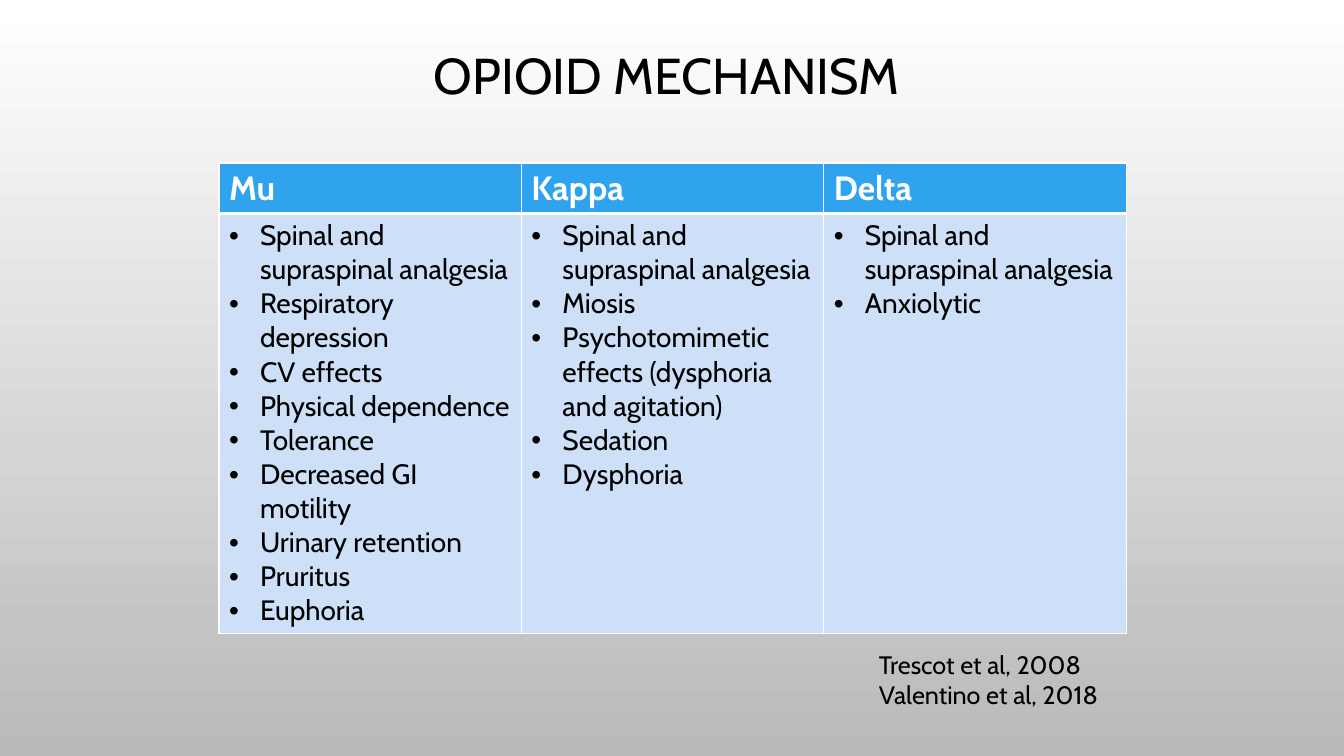
from lxml.etree import SubElement
from pptx import Presentation
from pptx.dml.color import RGBColor
from pptx.enum.text import MSO_ANCHOR, MSO_AUTO_SIZE, PP_ALIGN
from pptx.oxml.ns import qn
from pptx.util import Emu, Pt

TITLE = "OPIOID MECHANISM "
RECEPTORS = {
    "Mu": [
        "Spinal and supraspinal analgesia",
        "Respiratory depression",
        "CV effects",
        "Physical dependence",
        "Tolerance",
        "Decreased GI motility",
        "Urinary retention",
        "Pruritus",
        "Euphoria",
    ],
    "Kappa": [
        "Spinal and supraspinal analgesia",
        "Miosis",
        "Psychotomimetic effects (dysphoria and agitation)",
        "Sedation",
        "Dysphoria",
    ],
    "Delta": ["Spinal and supraspinal analgesia", "Anxiolytic"],
}
CITATIONS = ["Trescot et al, 2008", "Valentino et al, 2018"]

FONT = "Cabin"
BLACK, WHITE = "000000", "FFFFFF"
BACKGROUND = [WHITE, "B9B9B9"]
HEADER_FILL, BODY_FILL = "2FA3EE", "CDE0F8"

SLIDE_SIZE = (1344, 756)
TITLE_BOX = (118, 3, 1109, 151)
TABLE_LEFT, TABLE_TOP = 219, 163
COLUMN_WIDTH = 302.4
ROW_HEIGHTS = (50, 420)
CITATION_BOX = (869, 644, 271, 72)
BULLET_INDENT = 31
THIN, THICK = 1, 3


def px(length):
    return Emu(round(length * 914400 / 100.8))


def rgb(color):
    return RGBColor.from_string(color)


def write(frame, lines, size, color=BLACK, bold=False, bullets=False):
    frame.text = "\n".join(lines)
    for paragraph in frame.paragraphs:
        if bullets:
            add_bullet(paragraph)
        for run in paragraph.runs:
            run.font.name = FONT
            run.font.size = Pt(size)
            run.font.bold = bold
            run.font.color.rgb = rgb(color)


def add_bullet(paragraph):
    properties = paragraph._p.get_or_add_pPr()
    properties.set("marL", str(px(BULLET_INDENT)))
    properties.set("indent", str(-px(BULLET_INDENT)))
    SubElement(properties, qn("a:buFont"), typeface="Arial")
    SubElement(properties, qn("a:buChar"), char="•")


def style_cell(cell, color, top, bottom):
    """Draw white borders, then the fill, in the order the schema asks for."""
    properties = cell._tc.get_or_add_tcPr()
    borders = {"a:lnL": THIN, "a:lnR": THIN, "a:lnT": top, "a:lnB": bottom}
    for side, width in borders.items():
        border = SubElement(properties, qn(side), w=str(Pt(width)))
        SubElement(SubElement(border, qn("a:solidFill")), qn("a:srgbClr"), val=WHITE)
    cell.fill.solid()
    cell.fill.fore_color.rgb = rgb(color)


def add_background(slide):
    fill = slide.background.fill
    fill.gradient()
    fill.gradient_angle = 270
    for stop, color, position in zip(fill.gradient_stops, BACKGROUND, (0, 1)):
        stop.color.rgb = rgb(color)
        stop.position = position


def add_title(slide):
    frame = slide.shapes.add_textbox(*map(px, TITLE_BOX)).text_frame
    frame.word_wrap = True
    frame.vertical_anchor = MSO_ANCHOR.MIDDLE
    write(frame, [TITLE], 36)
    frame.paragraphs[0].alignment = PP_ALIGN.CENTER
    frame.paragraphs[0].line_spacing = 0.9


def add_receptor_table(slide):
    count = len(RECEPTORS)
    bounds = (TABLE_LEFT, TABLE_TOP, COLUMN_WIDTH * count, sum(ROW_HEIGHTS))
    table = slide.shapes.add_table(2, count, *map(px, bounds)).table
    for row, height in zip(table.rows, ROW_HEIGHTS):
        row.height = px(height)
    for index, (receptor, effects) in enumerate(RECEPTORS.items()):
        table.columns[index].width = px(COLUMN_WIDTH)
        header, body = table.cell(0, index), table.cell(1, index)
        style_cell(header, HEADER_FILL, THIN, THICK)
        write(header.text_frame, [receptor], 24, WHITE, bold=True)
        style_cell(body, BODY_FILL, THICK, THIN)
        write(body.text_frame, effects, 20, bullets=True)


def add_citations(slide):
    frame = slide.shapes.add_textbox(*map(px, CITATION_BOX)).text_frame
    frame.word_wrap = False
    frame.auto_size = MSO_AUTO_SIZE.SHAPE_TO_FIT_TEXT
    write(frame, CITATIONS, 18)


def main():
    deck = Presentation()
    deck.slide_width, deck.slide_height = map(px, SLIDE_SIZE)
    slide = deck.slides.add_slide(deck.slide_layouts[6])
    add_background(slide)
    add_title(slide)
    add_receptor_table(slide)
    add_citations(slide)
    deck.save("out.pptx")


if __name__ == "__main__":
    main()
